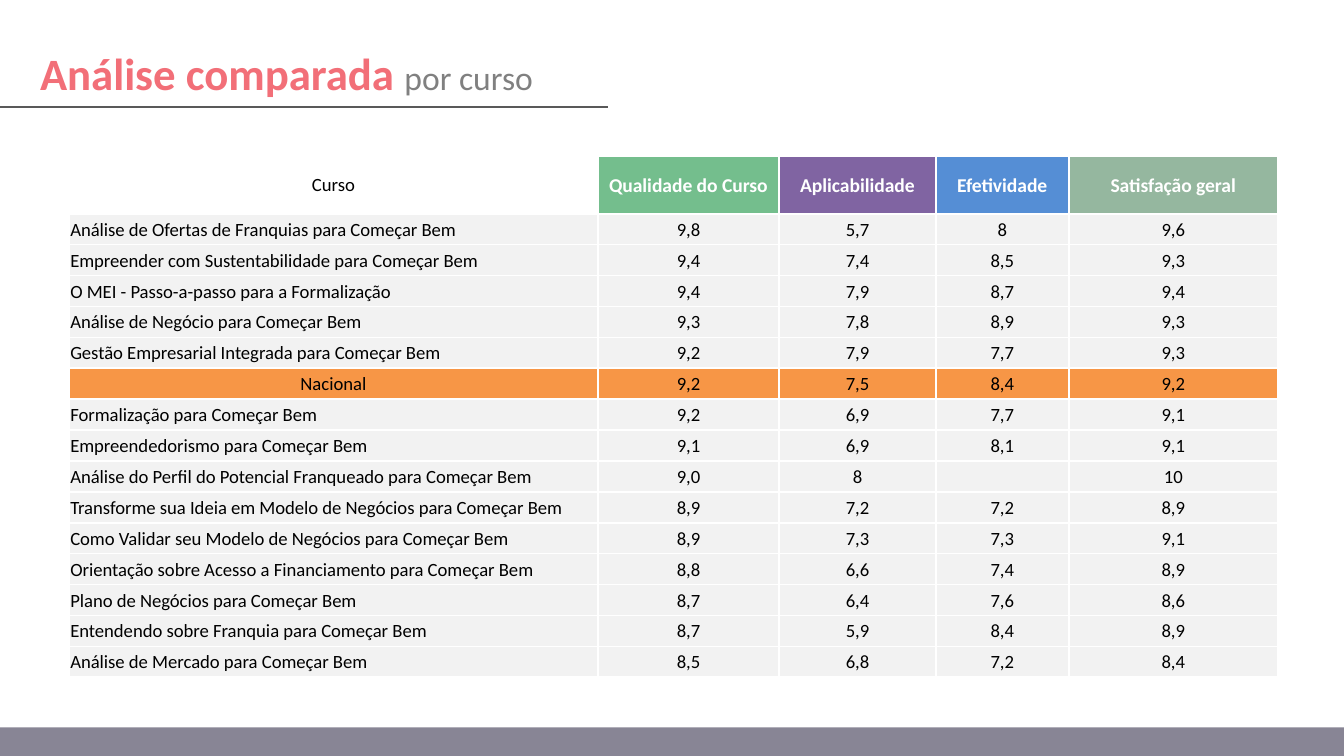
"""Build the slide comparing course ratings."""
from lxml.etree import SubElement
from pptx import Presentation
from pptx.dml.color import RGBColor
from pptx.enum.shapes import MSO_CONNECTOR, MSO_SHAPE
from pptx.enum.text import MSO_ANCHOR, MSO_AUTO_SIZE, PP_ALIGN
from pptx.oxml import parse_xml
from pptx.oxml.ns import nsdecls, qn
from pptx.util import Inches, Pt

WHITE = RGBColor(0xFF, 0xFF, 0xFF)
BLACK = RGBColor(0x00, 0x00, 0x00)
CORAL = RGBColor(0xF2, 0x6F, 0x78)
GRAY = RGBColor(0x80, 0x80, 0x80)
DARK_GRAY = RGBColor(0x59, 0x59, 0x59)
LIGHT_GRAY = RGBColor(0xF2, 0xF2, 0xF2)
SLATE = RGBColor(0x88, 0x85, 0x95)
ORANGE = RGBColor(0xF7, 0x96, 0x46)
GREEN = RGBColor(0x74, 0xBE, 0x8D)
PURPLE = RGBColor(0x80, 0x64, 0xA2)
BLUE = RGBColor(0x55, 0x8E, 0xD5)
SAGE = RGBColor(0x95, 0xB7, 0x9F)

WIDTH = Inches(10)
HEIGHT = WIDTH * 9 // 16
COLUMN, ROW = WIDTH / 100, HEIGHT / 100
COLUMN_SPANS = [39.35, 13.5, 11.65, 9.9, 15.55]
HEADER_SPAN, BODY_SPAN = 7.64, 4.09

HEADERS = ["Curso", "Qualidade do Curso", "Aplicabilidade", "Efetividade", "Satisfação geral"]
HEADER_FILLS = [None, GREEN, PURPLE, BLUE, SAGE]
COURSES = [
    ["Análise de Ofertas de Franquias para Começar Bem", "9,8", "5,7", "8", "9,6"],
    ["Empreender com Sustentabilidade para Começar Bem", "9,4", "7,4", "8,5", "9,3"],
    ["O MEI - Passo-a-passo para a Formalização", "9,4", "7,9", "8,7", "9,4"],
    ["Análise de Negócio para Começar Bem", "9,3", "7,8", "8,9", "9,3"],
    ["Gestão Empresarial Integrada para Começar Bem", "9,2", "7,9", "7,7", "9,3"],
    ["Nacional", "9,2", "7,5", "8,4", "9,2"],
    ["Formalização para Começar Bem", "9,2", "6,9", "7,7", "9,1"],
    ["Empreendedorismo para Começar Bem", "9,1", "6,9", "8,1", "9,1"],
    ["Análise do Perfil do Potencial Franqueado para Começar Bem", "9,0", "8", "", "10"],
    ["Transforme sua Ideia em Modelo de Negócios para Começar Bem", "8,9", "7,2", "7,2", "8,9"],
    ["Como Validar seu Modelo de Negócios para Começar Bem", "8,9", "7,3", "7,3", "9,1"],
    ["Orientação sobre Acesso a Financiamento para Começar Bem", "8,8", "6,6", "7,4", "8,9"],
    ["Plano de Negócios para Começar Bem", "8,7", "6,4", "7,6", "8,6"],
    ["Entendendo sobre Franquia para Começar Bem", "8,7", "5,9", "8,4", "8,9"],
    ["Análise de Mercado para Começar Bem", "8,5", "6,8", "7,2", "8,4"],
]


def add_text(paragraph, text, size=10, color=BLACK, bold=False, align=PP_ALIGN.LEFT):
    paragraph.alignment = align
    if not text:
        SubElement(paragraph._p, qn("a:endParaRPr"), sz=str(size * 100))
        return
    run = paragraph.add_run()
    run.text = text
    run.font.name = "Calibri"
    run.font.size = Pt(size)
    run.font.bold = bold
    run.font.color.rgb = color


def set_borders(cell, color, width):
    properties = cell._tc.get_or_add_tcPr()
    for position, side in enumerate(["lnL", "lnR", "lnT", "lnB"]):
        properties.insert(position, parse_xml(
            f'<a:{side} {nsdecls("a")} w="{Pt(width)}"><a:solidFill>'
            f'<a:srgbClr val="{color}"/></a:solidFill></a:{side}>'))


presentation = Presentation()
presentation.slide_width, presentation.slide_height = WIDTH, HEIGHT
slide = presentation.slides.add_slide(presentation.slide_layouts[6])
slide.background.fill.solid()
slide.background.fill.fore_color.rgb = WHITE

footer_top = int(96.2 * ROW)
footer = slide.shapes.add_shape(MSO_SHAPE.RECTANGLE, 0, footer_top, WIDTH, HEIGHT - footer_top)
footer.shadow.inherit = False
footer.fill.solid()
footer.fill.fore_color.rgb = SLATE
footer.line.fill.background()

rows = [HEADERS] + COURSES
row_spans = [HEADER_SPAN] + [BODY_SPAN] * len(COURSES)
table = slide.shapes.add_table(
    len(rows), len(HEADERS), int(5.13 * COLUMN), int(20.64 * ROW),
    int(sum(COLUMN_SPANS) * COLUMN), int(sum(row_spans) * ROW)).table
table.first_row = False
table.horz_banding = False
for column, span in zip(table.columns, COLUMN_SPANS):
    column.width = int(span * COLUMN)

for row_index, (values, span) in enumerate(zip(rows, row_spans)):
    table.rows[row_index].height = int(span * ROW)
    is_header = row_index == 0
    is_average = values[0] == "Nacional"
    for column_index, value in enumerate(values):
        cell = table.cell(row_index, column_index)
        cell.vertical_anchor = MSO_ANCHOR.MIDDLE
        cell.margin_left = cell.margin_right = cell.margin_top = Inches(0.01)
        cell.margin_bottom = 0
        fill = HEADER_FILLS[column_index] if is_header else ORANGE if is_average else LIGHT_GRAY
        if fill is None:
            cell.fill.background()
        else:
            cell.fill.solid()
            cell.fill.fore_color.rgb = fill
        set_borders(cell, WHITE, 1)
        centered = is_header or is_average or column_index > 0
        rating_header = is_header and column_index > 0
        add_text(cell.text_frame.paragraphs[0], value,
                 size=10.5 if rating_header else 10,
                 color=WHITE if rating_header else BLACK,
                 bold=rating_header,
                 align=PP_ALIGN.CENTER if centered else PP_ALIGN.LEFT)

title = slide.shapes.add_textbox(int(2 * COLUMN), int(5.16 * ROW), int(86.6 * COLUMN), int(8.9 * ROW))
title.text_frame.word_wrap = True
title.text_frame.auto_size = MSO_AUTO_SIZE.SHAPE_TO_FIT_TEXT
title_paragraph = title.text_frame.paragraphs[0]
add_text(title_paragraph, "Análise comparada ", size=24, color=CORAL, bold=True)
add_text(title_paragraph, "por curso", size=18, color=GRAY)

rule_top = int(14.16 * ROW)
rule = slide.shapes.add_connector(MSO_CONNECTOR.STRAIGHT, 0, rule_top, int(45.25 * COLUMN), rule_top)
rule.line.color.rgb = DARK_GRAY
rule.line.width = Pt(0.75)
SubElement(rule._element.spPr, qn("a:effectLst"))

presentation.save("out.pptx")
